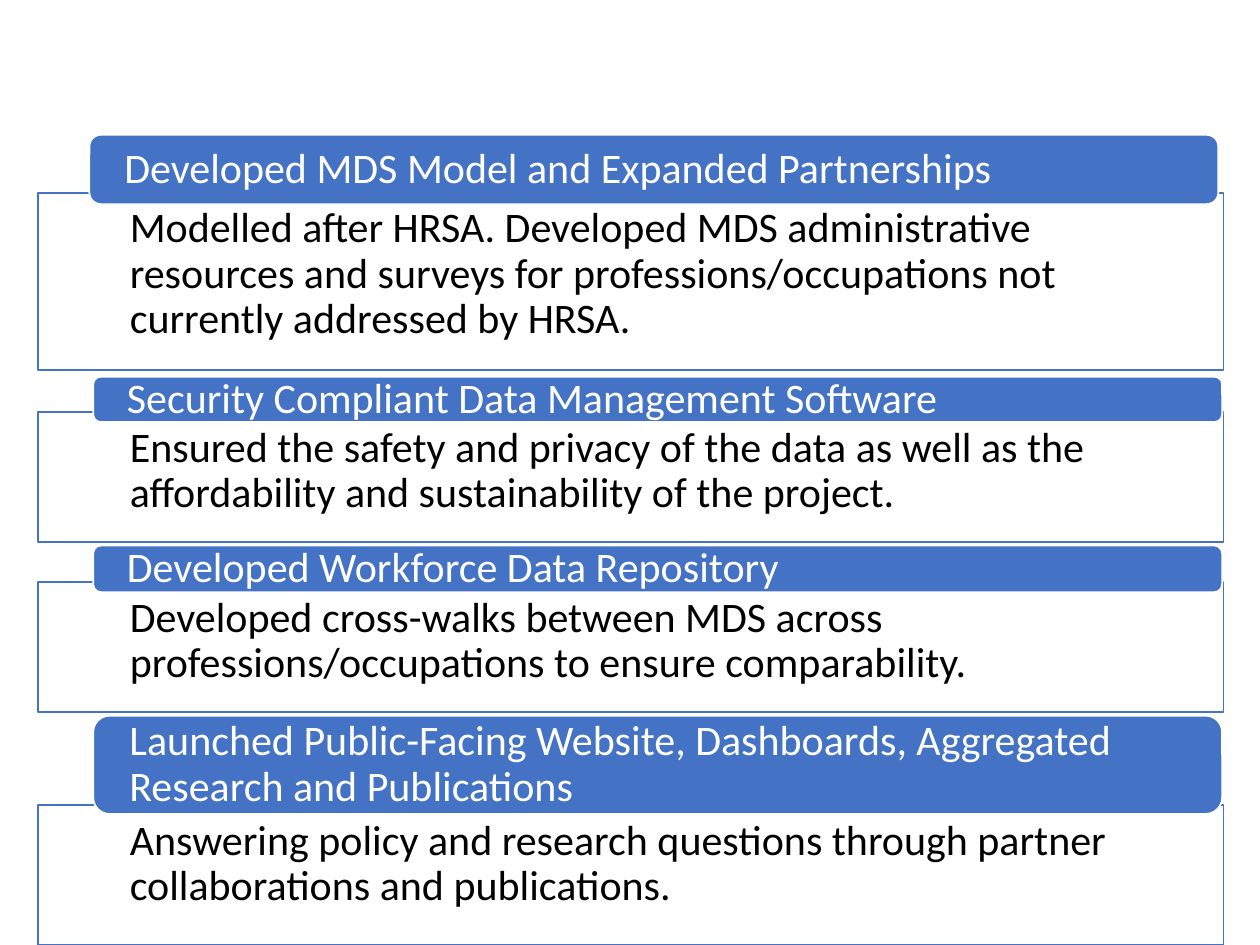
import pptx
import pptx.dml.color
import pptx.enum.shapes
import pptx.enum.text
import pptx.oxml
import pptx.oxml.ns
import pptx.util

PX = 9144  # EMU per px, 100 px to the inch
BLUE, WHITE, BLACK = "4472C4", "FFFFFF", "000000"
SHAPES = pptx.enum.shapes.MSO_SHAPE
ANCHORS = pptx.enum.text.MSO_ANCHOR


def color(value):
    return pptx.dml.color.RGBColor.from_string(value)


def add_panel(page, kind, bounds, fill, line, text, ink, insets, anchor):
    shape = page.shapes.add_shape(kind, *[n * PX for n in bounds])
    shape.shadow.inherit = False
    shape.fill.solid()
    shape.fill.fore_color.rgb = color(fill)
    shape.line.color.rgb = color(line)
    shape.line.width = pptx.util.Pt(1)
    frame = shape.text_frame
    frame.word_wrap = True
    frame.vertical_anchor = anchor
    frame.margin_left = frame.margin_right = insets[0] * PX
    frame.margin_top, frame.margin_bottom = insets[1] * PX, insets[2] * PX
    frame.text = text
    para = frame.paragraphs[0]
    para.alignment = pptx.enum.text.PP_ALIGN.LEFT
    para.line_spacing = 0.9
    font = para.runs[0].font
    font.name, font.size = "Calibri", pptx.util.Pt(24)
    font.color.rgb = color(ink)
    return shape


deck = pptx.Presentation()
deck.slide_width, deck.slide_height = 1000 * PX, 750 * PX
page = deck.slides.add_slide(deck.slide_layouts[6])

# Sections: header left, top, height; body top, height; header and body text
sections = [
    (71, 107, 55, 153, 141, "Developed MDS Model and Expanded Partnerships",
     "Modelled after HRSA. Developed MDS administrative resources and surveys "
     "for professions/occupations not currently addressed by HRSA."),
    (74, 299, 36, 327, 103, "Security Compliant Data Management Software",
     "Ensured the safety and privacy of the data as well as the affordability "
     "and sustainability of the project."),
    (74, 433, 37, 462, 103, "Developed Workforce Data Repository",
     "Developed cross-walks between MDS across professions/occupations "
     "to ensure comparability."),
    (74, 568, 78, 639, 111,
     "Launched Public-Facing Website, Dashboards, Aggregated Research and Publications",
     "Answering policy and research questions through partner collaborations "
     "and publications."),
]

for left, top, height, body_top, body_height, heading, detail in sections:
    # Outlined body, slightly transparent
    body = add_panel(page, SHAPES.RECTANGLE, (30, body_top, 941, body_height),
                     WHITE, BLUE, detail, BLACK, (73, 11, 19), ANCHORS.TOP)
    fill_color = body.element.spPr.find(
        pptx.oxml.ns.qn("a:solidFill") + "/" + pptx.oxml.ns.qn("a:srgbClr"))
    fill_color.append(pptx.oxml.parse_xml(
        '<a:alpha %s val="90000"/>' % pptx.oxml.ns.nsdecls("a")))

    # Rounded header overlapping the body
    add_panel(page, SHAPES.ROUNDED_RECTANGLE, (left, top, 896, height),
              BLUE, WHITE, heading, WHITE, (25, 0, 0), ANCHORS.MIDDLE)

deck.save("out.pptx")
